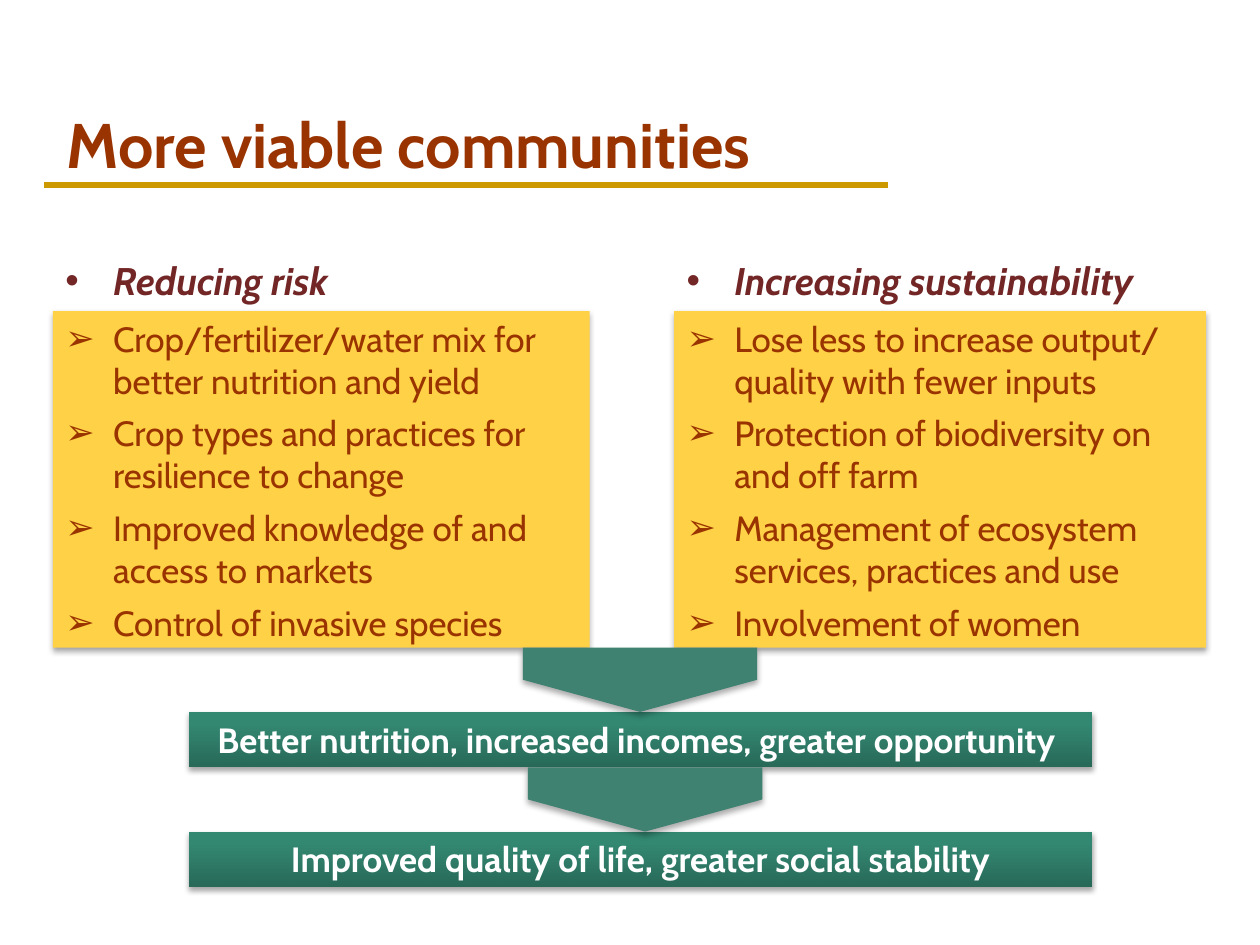
from copy import deepcopy

from pptx import Presentation
from pptx.dml.color import RGBColor as RGB
from pptx.enum.shapes import MSO_CONNECTOR as CONN, MSO_SHAPE as SHAPE
from pptx.enum.text import MSO_ANCHOR as ANCHOR, PP_ALIGN as ALIGN
from pptx.oxml.ns import qn
from pptx.oxml.xmlchemy import OxmlElement as Element
from pptx.util import Emu, Inches, Pt

# Content
TITLE = "More viable communities"
COLUMNS = [
    ("Reducing risk", [
        "Crop/fertilizer/water mix for better nutrition and yield",
        "Crop types and practices for resilience to change",
        "Improved knowledge of and access to markets",
        "Control of invasive species"]),
    ("Increasing sustainability", [
        "Lose less to increase output/ quality with fewer inputs",
        "Protection of biodiversity on and off farm",
        "Management of ecosystem services, practices and use",
        "Involvement of women"]),
]
OUTCOMES = ["Better nutrition, increased incomes, greater opportunity ",
            "Improved quality of life, greater social stability"]

# Style
FONT = "Cabin"
COLORS = {"rust": "993300", "gold": "CC9900", "maroon": "732626", "yellow": "FFD147",
          "teal": "3F8271", "white": "FFFFFF", "black": "000000"}
BAR_STOPS = [(0, "286958"), (0.8, "338872"), (1, "328A74")]

# Grid, in inches
SLIDE_W, SLIDE_H = 10, 7.5
COL_X, COL_W = [0.42, 5.35], [4.26, 4.22]
HEAD_Y, PANEL_Y, PANEL_H = 1.99, 2.47, 2.67
BAR_X, BAR_Y, BAR_W, BAR_H, BAR_STEP = 1.5, 5.65, 7.17, 0.44, 0.95
ARROW_W, ARROW_H, ARROW_CX = 1.86, 0.51, [5.08, 5.12]


def color(name):
    return RGB.from_string(COLORS[name])


def add_child(parent, tag, **attrs):
    child = Element(tag)
    for key, value in attrs.items():
        child.set(key, str(value))
    parent.append(child)
    return child


def add_shadow(sp, blur, dist, alpha):
    sp.shadow.inherit = False
    effects = sp._element.spPr.find(qn("a:effectLst"))
    shadow = add_child(effects, "a:outerShdw", blurRad=Pt(blur), dist=Pt(dist),
                       dir=90 * 60000, rotWithShape=0)
    clr = add_child(shadow, "a:srgbClr", val=COLORS["black"])
    add_child(clr, "a:alpha", val=alpha * 1000)


def add_box(s, shape, x, y, w, h, fill=None):
    sp = s.shapes.add_shape(shape, *map(Inches, (x, y, w, h)))
    sp.line.fill.background()
    if fill:
        sp.fill.solid()
        sp.fill.fore_color.rgb = color(fill)
    return sp


def set_text(tf, lines, size, ink, bullet=None, bold=False, italic=False,
             gap=0, align=ALIGN.LEFT, anchor=ANCHOR.TOP):
    tf.word_wrap = True
    tf.vertical_anchor = anchor
    tf.text = "\n".join(lines)
    for i, p in enumerate(tf.paragraphs):
        p.alignment = align
        if i:
            p.space_before = Pt(gap)
        if bullet:
            pPr = p._p.get_or_add_pPr()
            pPr.set("marL", str(Inches(0.38)))
            pPr.set("indent", str(-Inches(0.38)))
            add_child(pPr, "a:buFont", typeface="Arial")
            add_child(pPr, "a:buChar", char=bullet)
        for r in p.runs:
            f = r.font
            f.name, f.size, f.bold, f.italic = FONT, Pt(size), bold, italic
            f.color.rgb = color(ink)


def add_textbox(s, x, y, w, h):
    return s.shapes.add_textbox(*map(Inches, (x, y, w, h))).text_frame


def fill_gradient(sp):
    sp.fill.gradient()
    sp.fill.gradient_angle = 90
    stops = sp.fill.gradient_stops
    stop_list = sp._element.spPr.find(qn("a:gradFill")).find(qn("a:gsLst"))
    stop_list.append(deepcopy(stop_list[-1]))
    for stop, (position, rgb) in zip(sp.fill.gradient_stops, BAR_STOPS):
        stop.position = position
        stop.color.rgb = RGB.from_string(rgb)


def main():
    prs = Presentation()
    prs.slide_width, prs.slide_height = Inches(SLIDE_W), Inches(SLIDE_H)
    s = prs.slides.add_slide(prs.slide_layouts[6])

    # Title and rule
    rule = s.shapes.add_connector(CONN.STRAIGHT, *map(Inches, (0.35, 1.47, 7.05, 1.47)))
    rule.line.color.rgb = color("gold")
    rule.line.width = Pt(3.25)
    add_child(rule._element.spPr, "a:effectLst")
    set_text(add_textbox(s, 0.43, 0.68, 8.68, 0.92), [TITLE], 36, "rust",
             bold=True, anchor=ANCHOR.MIDDLE)

    # Two columns: heading above a panel of points
    for x, w, (heading, points) in zip(COL_X, COL_W, COLUMNS):
        set_text(add_textbox(s, x, HEAD_Y, w, PANEL_Y - HEAD_Y), [heading], 22, "maroon",
                 bullet="•", bold=True, italic=True)
        panel = add_box(s, SHAPE.RECTANGLE, x, PANEL_Y, w, PANEL_H, "yellow")
        add_shadow(panel, 3.1, 1.8, 35)
        set_text(panel.text_frame, points, 20, "rust", bullet="➢", gap=6)

    # Outcome bars
    for i, outcome in enumerate(OUTCOMES):
        bar = add_box(s, SHAPE.RECTANGLE, BAR_X, BAR_Y + i * BAR_STEP, BAR_W, BAR_H)
        fill_gradient(bar)
        add_shadow(bar, 3.1, 1.8, 35)
        set_text(bar.text_frame, [outcome], 20, "white", bold=True, align=ALIGN.CENTER)

    # Arrows pointing down onto each bar
    for i, cx in enumerate(ARROW_CX):
        cy = BAR_Y + i * BAR_STEP - ARROW_H / 2
        arrow = add_box(s, SHAPE.PENTAGON, cx - ARROW_H / 2, cy - ARROW_W / 2,
                        ARROW_H, ARROW_W, "teal")
        arrow.rotation = 90
        add_shadow(arrow, 3.5, 2.2, 32)

    prs.save("out.pptx")


if __name__ == "__main__":
    main()
